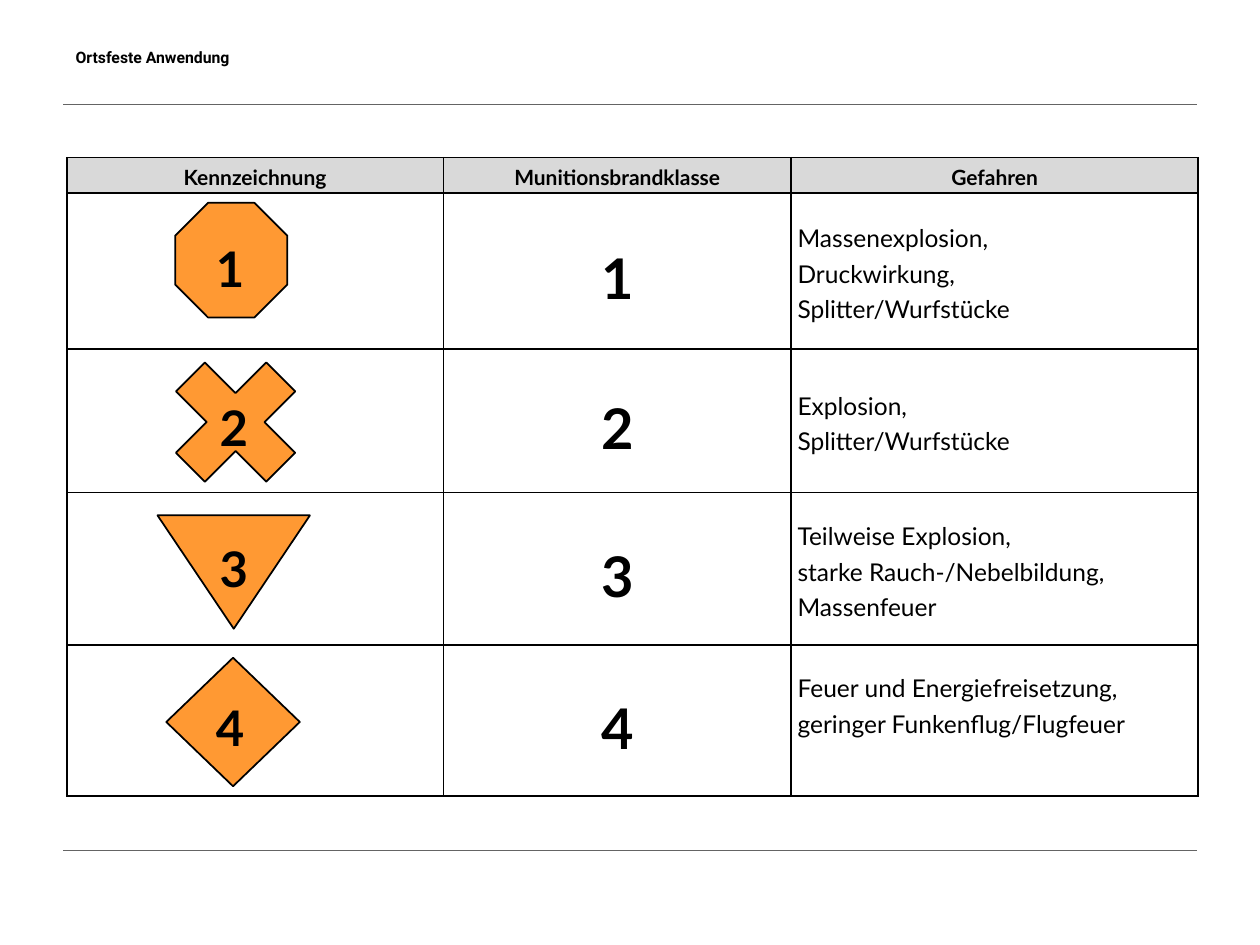
from dataclasses import dataclass

import pptx
import pptx.dml.color
import pptx.enum.shapes
import pptx.enum.text
import pptx.oxml
import pptx.oxml.ns
import pptx.util
from pptx.util import Inches

ALIGN = pptx.enum.text.PP_ALIGN
ANCHOR = pptx.enum.text.MSO_ANCHOR
SHAPE = pptx.enum.shapes.MSO_SHAPE


@dataclass(frozen=True)
class Theme:
    ink: str = "000000"
    rule: str = "646464"
    header: str = "D9D9D9"
    symbol: str = "FF9933"
    title_font: str = "Roboto"
    body_font: str = "Lato"
    title_size: float = 9
    header_size: float = 12
    hazard_size: float = 14
    symbol_size: float = 28
    class_size: float = 32
    rule_width: float = 0.25
    outline_width: float = 1
    line_spacing: float = 1.2


THEME = Theme()
COLUMN_WIDTHS = (2.99, 2.76, 3.23)
ROW_HEIGHTS = (0.28, 1.24, 1.14, 1.21, 1.2)
HEADINGS = ("Kennzeichnung", "Munitionsbrandklasse", "Gefahren")
HAZARDS = (
    "Massenexplosion,\nDruckwirkung,\nSplitter/Wurfstücke",
    "Explosion,\nSplitter/Wurfstücke",
    "Teilweise Explosion,\nstarke Rauch-/Nebelbildung, Massenfeuer",
    "Feuer und Energiefreisetzung, geringer Funkenflug/Flugfeuer",
)
# Each symbol: preset, box within its table row, rotation, label offset within the symbol
SYMBOLS = (
    (SHAPE.OCTAGON, (0.86, 0.08, 0.89, 0.91), 0, (-0.01, 0.14)),
    (SHAPE.MATH_MULTIPLY, (0.65, -0.11, 1.38, 1.38), 0, (0.23, 0.35)),
    (SHAPE.ISOSCELES_TRIANGLE, (0.72, 0.18, 1.21, 0.9), 180, (0.16, 0.04)),
    (SHAPE.DIAMOND, (0.79, 0.1, 1.06, 1.02), 0, (0.06, 0.17)),
)


def color(value):
    return pptx.dml.color.RGBColor.from_string(value)


def format_text(text_frame, size, bold, align, font=THEME.body_font, spacing=THEME.line_spacing):
    for paragraph in text_frame.paragraphs:
        paragraph.alignment = align
        paragraph.line_spacing = spacing
        for run in paragraph.runs:
            run.font.name = font
            run.font.size = pptx.util.Pt(size)
            run.font.bold = bold
            run.font.color.rgb = color(THEME.ink)


def set_borders(cell):
    properties = cell._tc.get_or_add_tcPr()
    width = pptx.util.Pt(THEME.outline_width)
    for position, side in enumerate(("lnL", "lnR", "lnT", "lnB")):
        border = pptx.oxml.parse_xml(
            f'<a:{side} {pptx.oxml.ns.nsdecls("a")} w="{width}"><a:solidFill>'
            f'<a:srgbClr val="{THEME.ink}"/></a:solidFill></a:{side}>'
        )
        properties.insert(position, border)


def add_title(slide, left, top, width, height):
    title = slide.shapes.title
    title.left, title.top = Inches(left), Inches(top)
    title.width, title.height = Inches(width), Inches(height)
    text_frame = title.text_frame
    text_frame.text = "Ortsfeste Anwendung"
    text_frame.vertical_anchor = ANCHOR.MIDDLE
    format_text(text_frame, THEME.title_size, True, ALIGN.LEFT, THEME.title_font, 1.0)


def add_rule(slide, left, top, width):
    rule = slide.shapes.add_connector(
        pptx.enum.shapes.MSO_CONNECTOR.STRAIGHT,
        Inches(left), Inches(top), Inches(left + width), Inches(top),
    )
    rule.line.color.rgb = color(THEME.rule)
    rule.line.width = pptx.util.Pt(THEME.rule_width)
    rule._element.spPr.append(
        pptx.oxml.parse_xml(f'<a:effectLst {pptx.oxml.ns.nsdecls("a")}/>')
    )


def fill_cell(cell, text, size, bold, align, fill=None):
    cell.margin_left = cell.margin_right = Inches(0.05)
    cell.margin_top = cell.margin_bottom = 0
    cell.vertical_anchor = ANCHOR.MIDDLE
    if fill:
        cell.fill.solid()
        cell.fill.fore_color.rgb = color(fill)
    else:
        cell.fill.background()
    set_borders(cell)
    cell.text_frame.text = text
    format_text(cell.text_frame, size, bold, align)


def add_class_table(slide, left, top):
    table = slide.shapes.add_table(
        len(ROW_HEIGHTS), len(COLUMN_WIDTHS), Inches(left), Inches(top),
        Inches(sum(COLUMN_WIDTHS)), Inches(sum(ROW_HEIGHTS)),
    ).table
    table.first_row = table.horz_banding = False
    for column, width in zip(table.columns, COLUMN_WIDTHS):
        column.width = Inches(width)
    for row, height in zip(table.rows, ROW_HEIGHTS):
        row.height = Inches(height)
    for index, heading in enumerate(HEADINGS):
        fill_cell(table.cell(0, index), heading, THEME.header_size, True, ALIGN.CENTER, THEME.header)
    for number, hazard in enumerate(HAZARDS, 1):
        fill_cell(table.cell(number, 0), "", THEME.header_size, False, ALIGN.CENTER)
        fill_cell(table.cell(number, 1), str(number), THEME.class_size, True, ALIGN.CENTER)
        fill_cell(table.cell(number, 2), hazard, THEME.hazard_size, False, ALIGN.LEFT)
    table.cell(len(HAZARDS), 2).margin_bottom = Inches(0.28)


def add_symbol(slide, left, top, width, height, preset, rotation, label_offset, number):
    symbol = slide.shapes.add_shape(
        preset, Inches(left), Inches(top), Inches(width), Inches(height)
    )
    symbol.rotation = rotation
    symbol.shadow.inherit = False
    symbol.fill.solid()
    symbol.fill.fore_color.rgb = color(THEME.symbol)
    symbol.line.color.rgb = color(THEME.ink)
    symbol.line.width = pptx.util.Pt(THEME.outline_width)

    label_left, label_top = label_offset
    label = slide.shapes.add_textbox(
        Inches(left + label_left), Inches(top + label_top), Inches(0.89), Inches(0.52)
    )
    label.text_frame.word_wrap = True
    label.text_frame.text = str(number)
    format_text(label.text_frame, THEME.symbol_size, True, ALIGN.CENTER)


def add_symbols(slide, left, top):
    for number, (preset, box, rotation, label_offset) in enumerate(SYMBOLS, 1):
        x, y, width, height = box
        row_top = top + sum(ROW_HEIGHTS[:number])
        add_symbol(slide, left + x, row_top + y, width, height,
                   preset, rotation, label_offset, number)


def main():
    presentation = pptx.Presentation()
    presentation.slide_width = Inches(10)
    presentation.slide_height = Inches(7.5)
    slide = presentation.slides.add_slide(presentation.slide_layouts.get_by_name("Title Only"))
    for top in (6.75, 0.83):
        add_rule(slide, 0.5, top, 9)
    add_title(slide, 0.5, 0.2, 8.81, 0.51)
    add_class_table(slide, 0.53, 1.25)
    add_symbols(slide, 0.53, 1.25)
    presentation.save("out.pptx")


if __name__ == "__main__":
    main()
